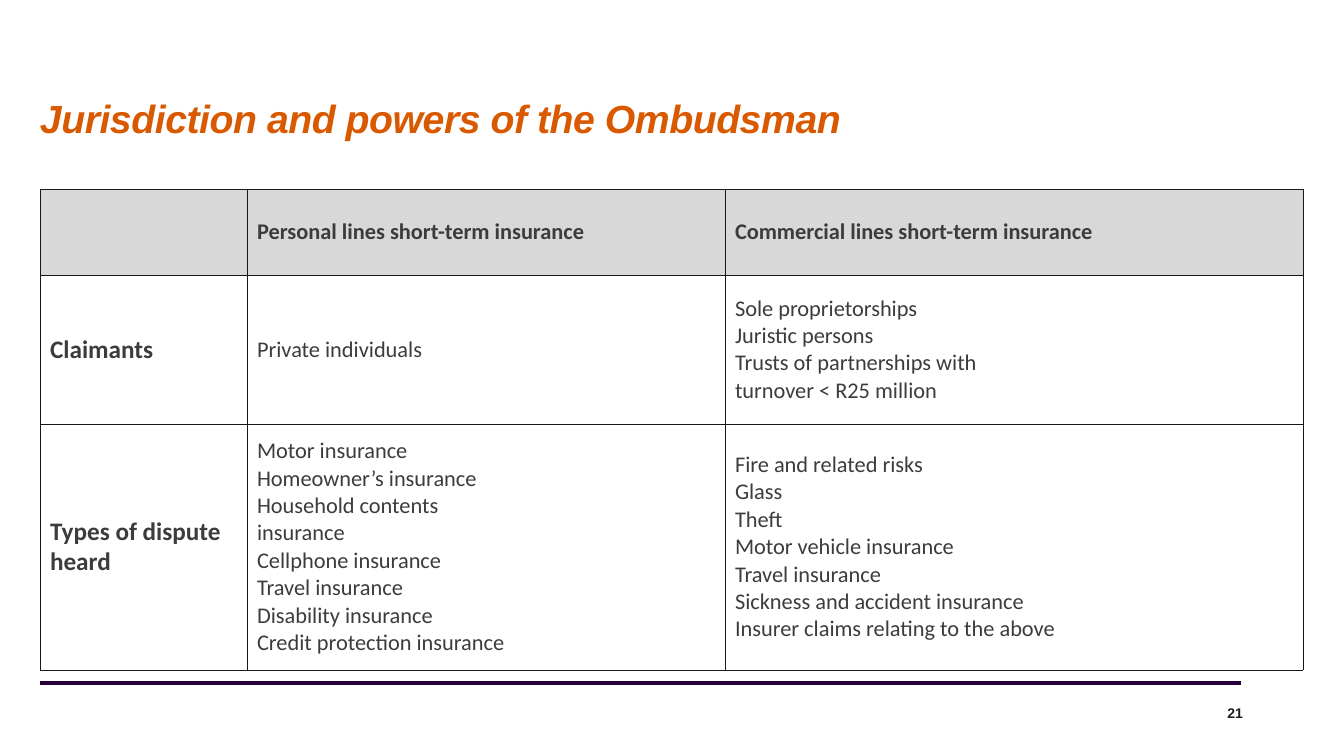
from lxml import etree
from pptx import Presentation
from pptx.dml.color import RGBColor
from pptx.enum.shapes import MSO_CONNECTOR
from pptx.enum.text import MSO_ANCHOR, PP_ALIGN
from pptx.oxml.ns import qn
from pptx.util import Emu, Pt

STRAIGHT = MSO_CONNECTOR.STRAIGHT
MIDDLE, BOTTOM = MSO_ANCHOR.MIDDLE, MSO_ANCHOR.BOTTOM
LEFT, RIGHT = PP_ALIGN.LEFT, PP_ALIGN.RIGHT

COLORS = {"title": "D95900", "text": "3C3C3C", "number": "1E1E1E",
          "rule": "26003B", "border": "191616", "header": "D8D8D8", "body": "FFFFFF"}
EMU_PER_PX = 12192000 / 1344


def px(n):
    return Emu(round(n * EMU_PER_PX))


def rgb(name):
    return RGBColor.from_string(COLORS[name])


class SlideBuilder:
    def __init__(self, s):
        self.s = s

    def run(self, p, text, size, font, color, bold=False, italic=False):
        r = p.add_run()
        r.text = text
        r.font.size, r.font.name = Pt(size), font
        r.font.bold, r.font.italic = bold, italic
        r.font.color.rgb = rgb(color)
        return r

    def text(self, x, y, w, h, text, size, color, anchor, align=LEFT, italic=False):
        tf = self.s.shapes.add_textbox(px(x), px(y), px(w), px(h)).text_frame
        tf.word_wrap = True
        tf.vertical_anchor = anchor
        tf.margin_left = tf.margin_top = tf.margin_right = tf.margin_bottom = 0
        p = tf.paragraphs[0]
        p.alignment = align
        return p, self.run(p, text, size, "Arial", color, True, italic)

    def line(self, x1, y1, x2, y2, color, width):
        sp = self.s.shapes.add_connector(STRAIGHT, px(x1), px(y1), px(x2), px(y2))
        sp.line.color.rgb, sp.line.width = rgb(color), Pt(width)
        etree.SubElement(sp._element.spPr, qn("a:effectLst"))

    def borders(self, cell, color, width):
        tcPr = cell._tc.get_or_add_tcPr()
        for side in ("lnL", "lnR", "lnT", "lnB"):
            ln = etree.SubElement(tcPr, qn("a:" + side), w=str(Pt(width)))
            fill = etree.SubElement(ln, qn("a:solidFill"))
            etree.SubElement(fill, qn("a:srgbClr"), val=COLORS[color])

    def cell(self, cell, paragraphs, size, bold, fill):
        self.borders(cell, "border", 0.5)
        cell.fill.solid()
        cell.fill.fore_color.rgb = rgb(fill)
        cell.vertical_anchor = MIDDLE
        tf = cell.text_frame
        for i, text in enumerate(paragraphs):
            p = tf.add_paragraph() if i else tf.paragraphs[0]
            for j, part in enumerate(text.split("\n")):
                if j:
                    p.add_line_break()
                self.run(p, part, size, "Calibri", "text", bold)
            # Breaks share the text size so that line heights stay even
            p.font.size = Pt(size)
            for br in p._p.findall(qn("a:br")):
                etree.SubElement(br, qn("a:rPr"), sz=str(size * 100))

    def table(self, x, y, widths, heights, rows):
        table = self.s.shapes.add_table(len(rows), len(widths), px(x), px(y),
                                        px(sum(widths)), px(sum(heights))).table
        for column, w in zip(table.columns, widths):
            column.width = px(w)
        for i, (h, row) in enumerate(zip(heights, rows)):
            table.rows[i].height = px(h)
            for j, paragraphs in enumerate(row):
                self.cell(table.cell(i, j), paragraphs, 16 if i == 0 or j else 18,
                          i == 0 or j == 0, "body" if i else "header")


ROWS = [
    [[], ["Personal lines short-term insurance"], ["Commercial lines short-term insurance"]],
    [["Claimants"], ["Private individuals"],
     ["Sole proprietorships\nJuristic persons\nTrusts of partnerships with",
      "turnover < R25 million"]],
    [["Types of dispute heard"],
     ["Motor insurance\nHomeowner’s insurance", "Household contents",
      "insurance\nCellphone insurance\nTravel insurance\nDisability insurance",
      "Credit protection insurance"],
     ["Fire and related risks\nGlass\nTheft", "Motor vehicle insurance", "Travel insurance",
      "Sickness and accident insurance", "Insurer claims relating to the above"]],
]


def main():
    prs = Presentation()
    prs.slide_width, prs.slide_height = px(1344), px(756)
    slide = SlideBuilder(prs.slides.add_slide(prs.slide_layouts[6]))

    # Footer rule and slide number
    slide.line(40, 683, 1241, 683, "rule", 2.25)
    slide.text(1188, 701, 55, 24, "21", 10, "number", MIDDLE, RIGHT)

    # Title, slightly tightened
    p, r = slide.text(40, 45, 1262, 97, "Jurisdiction and powers of the Ombudsman",
                      28, "title", BOTTOM, italic=True)
    p.line_spacing = 0.9
    r.font._element.set("spc", "-30")

    # Jurisdiction table
    slide.table(40, 189, [207, 478, 578], [86, 149, 246], ROWS)

    prs.save("out.pptx")


if __name__ == "__main__":
    main()
